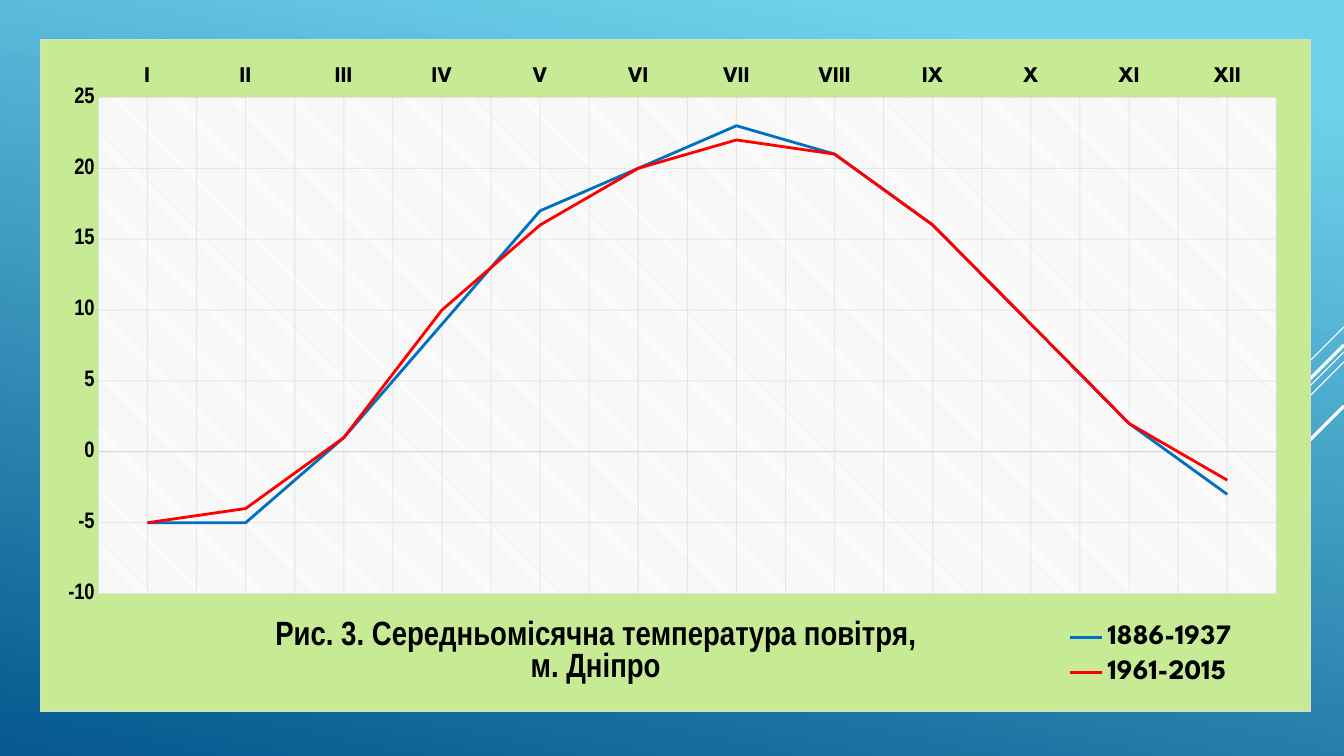
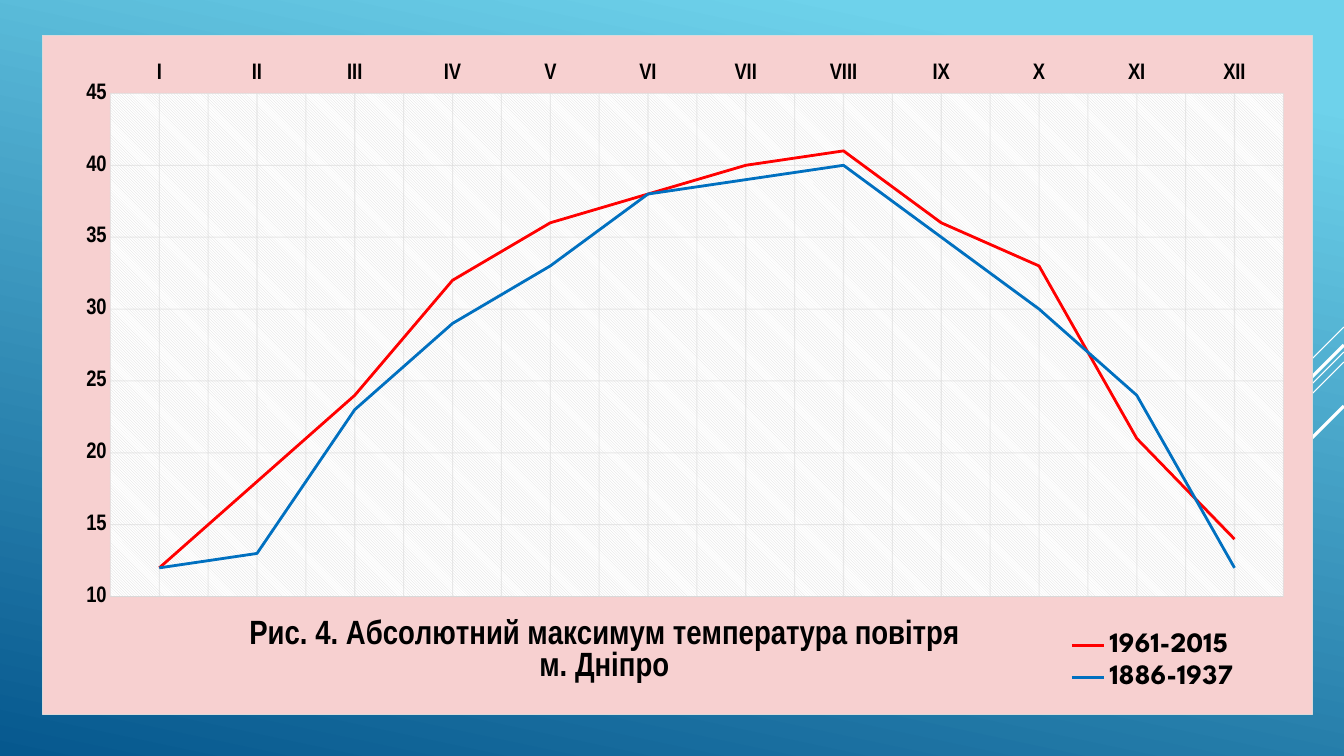
from copy import deepcopy
from lxml import etree
from pptx import Presentation
from pptx import util as u
from pptx.chart.data import CategoryChartData
from pptx.dml.color import RGBColor
from pptx.enum import chart as ch, shapes
from pptx.oxml import parse_xml
from pptx.oxml.ns import nsdecls, qn

PX = 914400 / 100.8
HUES = {
    "sky": "6ED2EB", "deep": "06588E", "white": "FFFFFF", "black": "000000",
    "grid": "D9D9D9", "blue": "0070C0", "red": "FF0000",
    "green": "C7EA94", "pink": "F7D0D0",
}
NARROW, WIDE = "Arial Narrow", "League Spartan"
MONTHS = ["I", "II", "III", "IV", "V", "VI", "VII", "VIII", "IX", "X", "XI", "XII"]
OLD, NEW = "1886-1937", "1961-2015"
TINTS = {OLD: "blue", NEW: "red"}
RAYS = [
    (327, 101, 0.75), (352, 329, 0.75), (362, 209, 0.75),
    (345, 192, 2.25), (406, 140, 2.25),
]
CHARTS = [
    {
        "box": (40, 39, 1271, 673), "fill": "green", "low": -10, "high": 25,
        "title": ["Рис. 3. Середньомісячна температура повітря,", "м. Дніпро"],
        "plot": (98, 97, 1179, 497), "head": (272, 617), "key": (1066, 617, 170, 77),
        "side": ch.XL_LEGEND_POSITION.CORNER, "face": WIDE,
        "rows": {
            OLD: [-5, -5, 1, 9, 17, 20, 23, 21, 16, 9, 2, -3],
            NEW: [-5, -4, 1, 10, 16, 20, 22, 21, 16, 9, 2, -2],
        },
    },
    {
        "box": (42, 35, 1271, 680), "fill": "pink", "low": 10, "high": 45,
        "title": ["Рис. 4. Абсолютний максимум температура повітря", "м. Дніпро"],
        "plot": (110, 93, 1174, 504), "head": (246, 616), "key": (1068, 628, 170, 68),
        "side": ch.XL_LEGEND_POSITION.RIGHT, "face": NARROW,
        "rows": {
            NEW: [12, 18, 24, 32, 36, 38, 40, 41, 36, 33, 21, 14],
            OLD: [12, 13, 23, 29, 33, 38, 39, 40, 35, 30, 24, 12],
        },
    },
]


def style(font, size, face, bold=True, hue="black"):
    font.size, font.name, font.bold = u.Pt(size), face, bold
    font.color.rgb = RGBColor.from_string(HUES[hue])


def place(node, index, area, box, inner=False):
    for old in node.findall(qn("c:layout")):
        node.remove(old)
    x, y, w, h = box
    parts = [(area[0] - x) / w, (area[1] - y) / h]
    parts += [area[2] / w, area[3] / h] if len(area) == 4 else []
    tags = '<c:layoutTarget val="inner"/>' if inner else ""
    tags += '<c:xMode val="edge"/><c:yMode val="edge"/>'
    tags += "".join(f'<c:{k} val="{v:.4f}"/>' for k, v in zip("xywh", parts))
    node.insert(index, parse_xml(
        f'<c:layout {nsdecls("c")}><c:manualLayout>{tags}</c:manualLayout></c:layout>'))


deck = Presentation()
deck.slide_width, deck.slide_height = round(1344 * PX), round(756 * PX)
back = deck.slide_master.background.fill
back.gradient()
back.gradient_angle = 258
for stop, spot, hue in zip(back.gradient_stops, (0.1, 1), ("sky", "deep")):
    stop.position = spot
    stop.color.rgb = RGBColor.from_string(HUES[hue])

for item in CHARTS:
    slide = deck.slides.add_slide(deck.slide_layouts[6])
    for top, run, width in RAYS:
        ends = [round(n * PX) for n in (1344, top, 1344 - run, top + run)]
        ray = slide.shapes.add_connector(shapes.MSO_CONNECTOR.STRAIGHT, *ends)
        ray.line.width = u.Pt(width)
        ray.line.color.rgb = RGBColor.from_string(HUES["white"])
        etree.SubElement(ray._element.spPr, qn("a:effectLst"))

    data = CategoryChartData()
    data.categories = MONTHS
    for name, vals in item["rows"].items():
        data.add_series(name, vals)
    box = item["box"]
    chart = slide.shapes.add_chart(
        ch.XL_CHART_TYPE.LINE, *(round(n * PX) for n in box), data).chart
    style(chart.font, 10, WIDE, False, "white")
    chart.plots[0].vary_by_categories = False
    for line in chart.plots[0].series:
        line.smooth = False
        line.marker.style = ch.XL_MARKER_STYLE.NONE
        line.format.line.width = u.Pt(2)
        line.format.line.color.rgb = RGBColor.from_string(HUES[TINTS[line.name]])

    cat, val = chart.category_axis, chart.value_axis
    for axis, face in ((cat, item["face"]), (val, NARROW)):
        axis.major_tick_mark = axis.minor_tick_mark = ch.XL_TICK_MARK.NONE
        style(axis.tick_labels.font, 16, face)
        axis.has_major_gridlines = True
        grid = axis.major_gridlines.format.line
        grid.width = u.Pt(0.75)
        grid.color.rgb = RGBColor.from_string(HUES["grid"])
        lines = axis._element.find(qn("c:majorGridlines"))
        for tone in lines.iter(qn("a:srgbClr")):
            etree.SubElement(tone, qn("a:alpha")).set("val", "54000")
    cat.has_minor_gridlines = True
    major = cat._element.find(qn("c:majorGridlines"))
    cat._element.find(qn("c:minorGridlines")).append(deepcopy(major[0]))
    cat.tick_label_position = ch.XL_TICK_LABEL_POSITION.HIGH
    cat.format.line.width = u.Pt(0.75)
    cat.format.line.color.rgb = RGBColor.from_string(HUES["grid"])
    val.format.line.fill.background()
    val.minimum_scale, val.maximum_scale = item["low"], item["high"]
    val.major_unit = 5

    chart.has_title = True
    frame = chart.chart_title.text_frame
    frame.text = "\n".join(item["title"])
    for para in frame.paragraphs:
        style(para.font, 24, NARROW)
    chart.chart_title.include_in_layout = False
    place(chart.chart_title._element, 1, item["head"], box)

    chart.has_legend = True
    key = chart.legend
    key.position = item["side"]
    key.include_in_layout = False
    style(key.font, 20, WIDE)
    place(key._element, 1, item["key"], box)

    root = chart._chartSpace.find(qn("c:chart"))
    plot = root.find(qn("c:plotArea"))
    place(plot, 0, item["plot"], box, True)
    plot.append(parse_xml(
        f'<c:spPr {nsdecls("c", "a")}><a:pattFill prst="ltDnDiag">'
        f'<a:fgClr><a:srgbClr val="{HUES["grid"]}"/></a:fgClr>'
        f'<a:bgClr><a:srgbClr val="{HUES["white"]}"/></a:bgClr>'
        '</a:pattFill><a:ln><a:noFill/></a:ln></c:spPr>'))
    root.addnext(parse_xml(
        f'<c:spPr {nsdecls("c", "a")}><a:solidFill>'
        f'<a:srgbClr val="{HUES[item["fill"]]}"/></a:solidFill>'
        f'<a:ln w="{u.Pt(0.75)}"><a:solidFill><a:srgbClr val="{HUES["grid"]}"/>'
        '</a:solidFill></a:ln></c:spPr>'))

deck.save("out.pptx")
